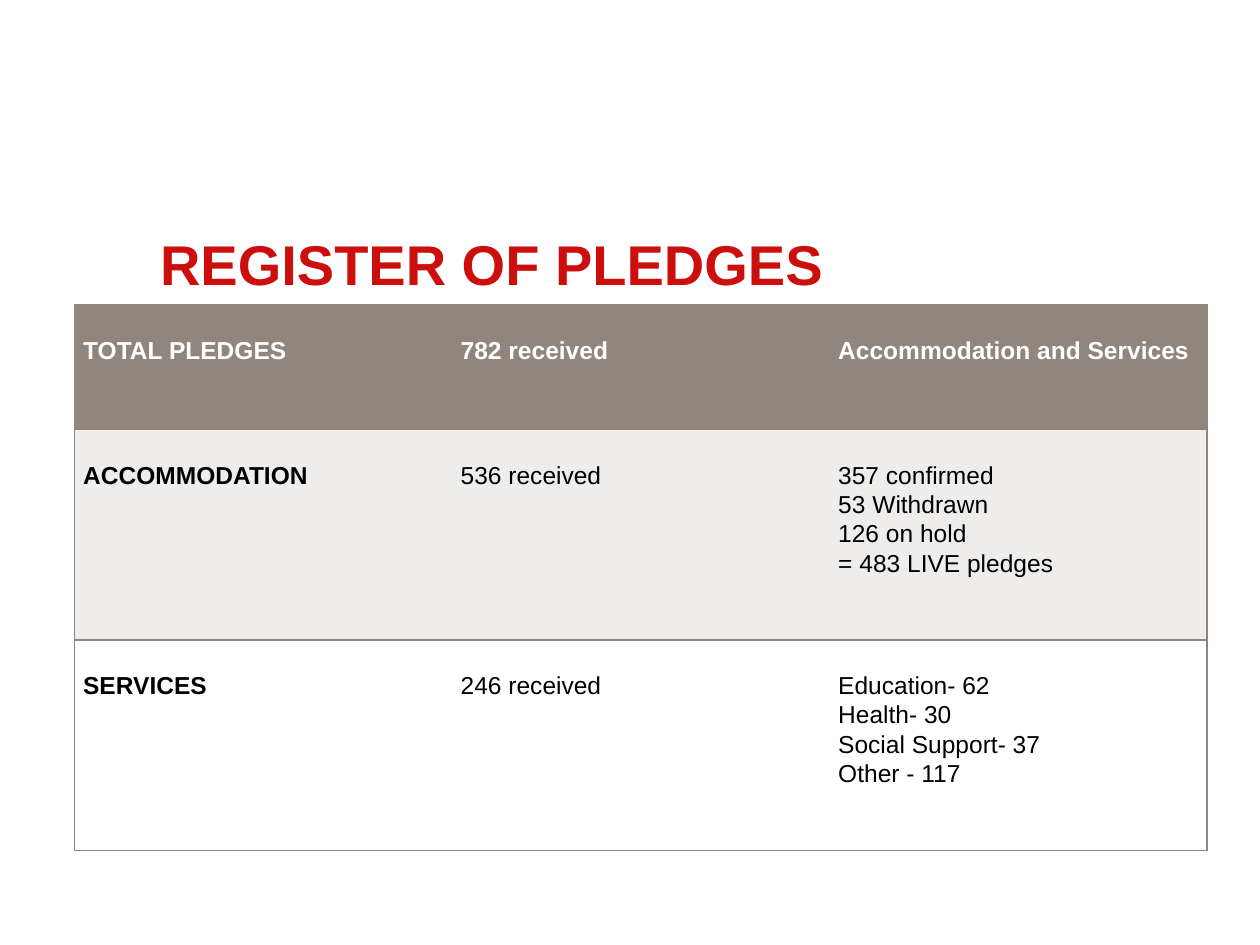
from lxml import etree
from pptx import Presentation
from pptx.dml.color import RGBColor
from pptx.enum.text import MSO_ANCHOR, PP_ALIGN
from pptx.oxml.ns import qn
from pptx.util import Inches, Pt

LEFT, MIDDLE, TOP = PP_ALIGN.LEFT, MSO_ANCHOR.MIDDLE, MSO_ANCHOR.TOP
RED = RGBColor(0xCC, 0x0F, 0x0D)
TAUPE = RGBColor(0x91, 0x86, 0x7E)
PALE = RGBColor(0xEE, 0xED, 0xEC)
WHITE = RGBColor(0xFF, 0xFF, 0xFF)
BLACK = RGBColor(0, 0, 0)
FONT = "Arial"

ROWS = [
    ["TOTAL PLEDGES", "782 received", "Accommodation and Services"],
    ["ACCOMMODATION", "536 received",
     "357 confirmed\n53 Withdrawn\n126 on hold\n= 483 LIVE pledges"],
    ["SERVICES", "246 received",
     "Education- 62\nHealth- 30\nSocial Support- 37\nOther - 117"],
]
HEIGHTS = [0.99, 1.67, 1.67]
FILLS = [TAUPE, PALE, WHITE]


def format_text(tf, size, color, bold):
    for p in tf.paragraphs:
        p.alignment = LEFT
        for r in p.runs:
            r.font.name = FONT
            r.font.size = Pt(size)
            r.font.bold = bold
            r.font.color.rgb = color


def set_borders(cell, sides):
    tcPr = cell._tc.get_or_add_tcPr()
    for i, side in enumerate("LRTB"):
        ln = etree.Element(qn(f"a:ln{side}"), w=str(Pt(1)))
        if side in sides:
            fill = etree.SubElement(ln, qn("a:solidFill"))
            etree.SubElement(fill, qn("a:srgbClr"), val=str(TAUPE))
        else:
            etree.SubElement(ln, qn("a:noFill"))
        tcPr.insert(i, ln)


prs = Presentation()
prs.slide_width, prs.slide_height = Inches(10), Inches(7.5)
s = prs.slides.add_slide(prs.slide_layouts[5])

# Title
title = s.shapes.title
title.left, title.top = Inches(1.17), Inches(1.75)
title.width, title.height = Inches(8.09), Inches(0.67)
tf = title.text_frame
tf.text = "REGISTER OF PLEDGES"
tf.vertical_anchor = MIDDLE
format_text(tf, 32, RED, True)

# Pledge table: three equal columns, outer frame and row rules only
table = s.shapes.add_table(len(ROWS), 3, Inches(0.59), Inches(2.42),
                           Inches(8.99), Inches(sum(HEIGHTS))).table
for row, height in zip(table.rows, HEIGHTS):
    row.height = Inches(height)

for i, texts in enumerate(ROWS):
    for j, text in enumerate(texts):
        cell = table.cell(i, j)
        cell.fill.solid()
        cell.fill.fore_color.rgb = FILLS[i]
        set_borders(cell, "TB" + {0: "L", 2: "R"}.get(j, ""))
        cell.margin_left = cell.margin_right = Inches(0.07)
        cell.margin_top, cell.margin_bottom = Inches(0.24), 0
        cell.vertical_anchor = TOP
        cell.text_frame.text = text
        for p in cell.text_frame.paragraphs:
            p.line_spacing = 1.07
        format_text(cell.text_frame, 14, BLACK if i else WHITE,
                    i == 0 or j == 0)

prs.save("out.pptx")
